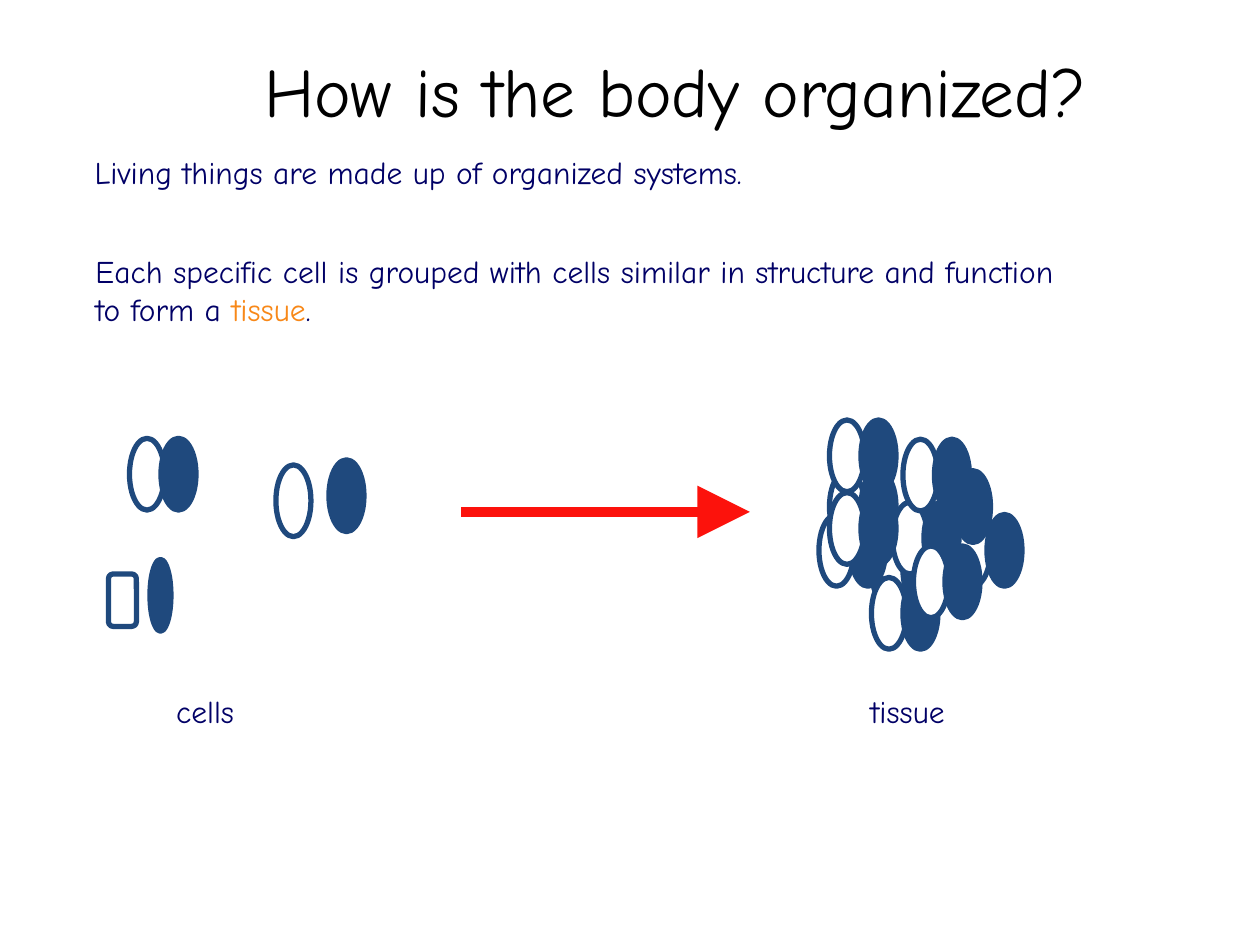
from dataclasses import dataclass

import lxml.etree
import pptx
import pptx.dml.color
import pptx.enum.shapes
import pptx.enum.text
import pptx.oxml.ns
import pptx.util

Pt = pptx.util.Pt
RGB = pptx.dml.color.RGBColor
Anchor = pptx.enum.text.MSO_ANCHOR
Align = pptx.enum.text.PP_ALIGN
Preset = pptx.enum.shapes.MSO_SHAPE
qn = pptx.oxml.ns.qn


@dataclass(frozen=True)
class Theme:
    font: str = "Comic Neue"
    title_size: float = 39.6
    body_size: float = 18
    title_color: str = "000000"
    body_color: str = "010066"
    term_color: str = "F88818"
    cell_color: str = "1F497D"
    hollow_color: str = "FFFFFF"
    arrow_color: str = "FC120C"
    outline: float = 3
    arrow_width: float = 6


THEME = Theme()


@dataclass(frozen=True)
class Span:
    text: str
    color: str = THEME.body_color
    size: float = THEME.body_size


@dataclass(frozen=True)
class Label:
    left: float
    top: float
    width: float
    height: float
    spans: tuple[Span, ...]
    anchor: Anchor = Anchor.TOP
    align: Align = Align.LEFT
    margin_top: float = 3.6


@dataclass(frozen=True)
class Cell:
    left: float
    top: float
    filled: bool
    width: float = 20
    height: float = 41
    preset: Preset = Preset.OVAL


def cell_pair(left: float, top: float) -> list[Cell]:
    """A hollow cell with a filled one overlapping its right edge."""
    return [Cell(left, top, False), Cell(left + 18, top, True)]


LABELS = [
    Label(62, 6, 648, 90,
          (Span("How is the body organized?", THEME.title_color, THEME.title_size),),
          Anchor.MIDDLE, Align.CENTER),
    Label(47, 83.5, 688, 29, (Span("Living things are made up of organized systems."),),
          Anchor.MIDDLE),
    Label(47.5, 134.5, 579, 83.5,
          (Span("Each specific cell is grouped with cells similar in structure "
                "and function to form a "),
           Span("tissue", THEME.term_color),
           Span(".")), margin_top=9.7),
    Label(93.6, 391.7, 136, 29, (Span("cells"),)),
    Label(490.3, 391.7, 181, 29, (Span("tissue"),)),
]

# Left and top of each pair in the tissue, from back to front
TISSUE_PAIRS = [
    (546, 294), (528, 269), (498, 305), (510, 287), (474, 269), (468, 294),
    (516, 251), (474, 240), (498, 330), (474, 281.5), (522, 312),
]
TISSUE = [cell for place in TISSUE_PAIRS for cell in cell_pair(*place)]

LOOSE_CELLS = [
    *cell_pair(74, 250.5),
    Cell(62, 328, False, 16, 30, Preset.ROUNDED_RECTANGLE),
    Cell(85.7, 319.7, True, width=12),
    Cell(157.7, 265.7, False),
    Cell(188, 262.8, True),
]


def set_format(target: object, values: dict[str, object]) -> None:
    for name, value in values.items():
        setattr(target, name, value)


def add_label(page: pptx.slide.Slide, label: Label) -> None:
    box = page.shapes.add_textbox(
        Pt(label.left), Pt(label.top), Pt(label.width), Pt(label.height))
    set_format(box.text_frame, {
        "word_wrap": True,
        "vertical_anchor": label.anchor,
        "margin_top": Pt(label.margin_top),
    })
    para = box.text_frame.paragraphs[0]
    para.alignment = label.align
    for span in label.spans:
        run = para.add_run()
        run.text = span.text
        set_format(run.font, {"name": THEME.font, "size": Pt(span.size)})
        run.font.color.rgb = RGB.from_string(span.color)


def add_cells(page: pptx.slide.Slide, cells: list[Cell]) -> None:
    group = page.shapes.add_group_shape()
    for cell in cells:
        shape = group.shapes.add_shape(
            cell.preset, Pt(cell.left), Pt(cell.top), Pt(cell.width), Pt(cell.height))
        shape.shadow.inherit = False
        shape.fill.solid()
        shape.fill.fore_color.rgb = RGB.from_string(
            THEME.cell_color if cell.filled else THEME.hollow_color)
        shape.line.color.rgb = RGB.from_string(THEME.cell_color)
        shape.line.width = Pt(THEME.outline)


def add_arrow(page: pptx.slide.Slide, left: float, right: float, height: float) -> None:
    arrow = page.shapes.add_connector(
        pptx.enum.shapes.MSO_CONNECTOR.STRAIGHT,
        Pt(left), Pt(height), Pt(right), Pt(height))
    arrow.line.color.rgb = RGB.from_string(THEME.arrow_color)
    arrow.line.width = Pt(THEME.arrow_width)
    lxml.etree.SubElement(arrow.line._get_or_add_ln(), qn("a:tailEnd"),
                          {"type": "triangle", "w": "lg", "len": "lg"})
    lxml.etree.SubElement(arrow._element.spPr, qn("a:effectLst"))


def main() -> None:
    deck = pptx.Presentation()
    set_format(deck, {"slide_width": Pt(720), "slide_height": Pt(540)})
    page = deck.slides.add_slide(deck.slide_layouts[6])

    # Cells on the left become tissue on the right
    add_cells(page, TISSUE)
    add_cells(page, LOOSE_CELLS)
    add_arrow(page, 263.5, 428.5, 292.5)

    # Title, statements and captions
    for label in LABELS:
        add_label(page, label)

    deck.save("out.pptx")


if __name__ == "__main__":
    main()
